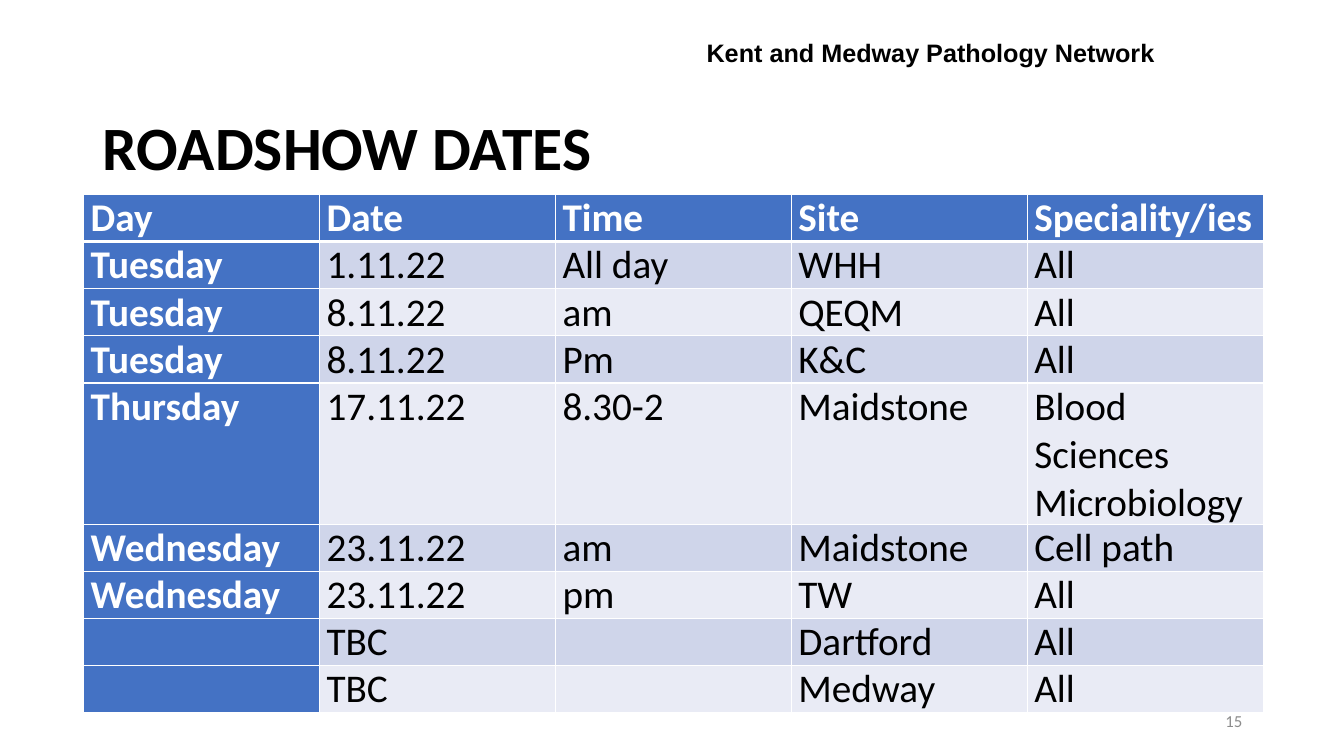
from dataclasses import dataclass

from lxml import etree
from pptx import Presentation
from pptx.dml.color import RGBColor
from pptx.enum.text import MSO_ANCHOR, MSO_AUTO_SIZE, PP_ALIGN
from pptx.oxml.ns import qn
from pptx.slide import Slide
from pptx.table import _Cell
from pptx.text.text import TextFrame
from pptx.util import Inches, Pt

LEFT, RIGHT = PP_ALIGN.LEFT, PP_ALIGN.RIGHT
TOP, MIDDLE = MSO_ANCHOR.TOP, MSO_ANCHOR.MIDDLE
FIXED = MSO_AUTO_SIZE.NONE

BLACK = RGBColor(0x00, 0x00, 0x00)
WHITE = RGBColor(0xFF, 0xFF, 0xFF)
GREY = RGBColor(0x8C, 0x8C, 0x8C)
BLUE = RGBColor(0x44, 0x72, 0xC4)
BANDS = (RGBColor(0xCF, 0xD5, 0xEA), RGBColor(0xE9, 0xEB, 0xF5))

HEADS = ("Day", "Date", "Time", "Site", "Speciality/ies")
ROW = 0.44
COL = 2.34


@dataclass
class Visit:
    day: str
    date: str
    time: str
    site: str
    field: str = "All"
    lines: int = 1

    def cells(self) -> tuple[str, ...]:
        return self.day, self.date, self.time, self.site, self.field


VISITS = [
    Visit("Tuesday", "1.11.22", "All day", "WHH"),
    Visit("Tuesday", "8.11.22", "am", "QEQM"),
    Visit("Tuesday", "8.11.22", "Pm", "K&C"),
    Visit("Thursday", "17.11.22", "8.30-2", "Maidstone",
          "Blood Sciences\nMicrobiology", 2),
    Visit("Wednesday", "23.11.22", "am", "Maidstone", "Cell path"),
    Visit("Wednesday", "23.11.22", "pm", "TW"),
    Visit("", "TBC", "", "Dartford"),
    Visit("", "TBC", "", "Medway"),
]


@dataclass
class Style:
    size: int
    color: RGBColor
    bold: bool = False
    font: str = "Calibri"
    align: PP_ALIGN = LEFT


@dataclass
class Label:
    text: str
    box: tuple[float, float, float, float]
    style: Style
    anchor: MSO_ANCHOR = TOP


LABELS = [
    Label("15", (9.42, 6.95, 3, 0.4), Style(12, GREY, align=RIGHT), MIDDLE),
    Label("Kent and Medway Pathology Network", (6.91, 0.32, 4.76, 0.4),
          Style(18, BLACK, True, "Arial")),
]


def write(frame: TextFrame, text: str, style: Style) -> None:
    frame.text = text
    for para in frame.paragraphs:
        para.alignment = style.align
        para.font.size = Pt(style.size)
        for run in para.runs:
            run.font.name = style.font
            run.font.size = Pt(style.size)
            run.font.bold = style.bold
            run.font.color.rgb = style.color


def edge(cell: _Cell, base: int) -> None:
    """Draw white borders; base is the bottom width in points."""
    props = cell._tc.get_or_add_tcPr()
    sides = {"a:lnL": 1, "a:lnR": 1, "a:lnT": 1, "a:lnB": base}
    for spot, (tag, width) in enumerate(sides.items()):
        line = etree.Element(qn(tag), w=str(Pt(width)))
        fill = etree.SubElement(line, qn("a:solidFill"))
        etree.SubElement(fill, qn("a:srgbClr"), val=str(WHITE))
        props.insert(spot, line)


def add_title(slide: Slide) -> None:
    title = slide.shapes.title
    title.left, title.top = Inches(0.92), Inches(0.77)
    title.width, title.height = Inches(11.5), Inches(1.45)
    frame = title.text_frame
    frame.auto_size = FIXED
    frame.vertical_anchor = MIDDLE
    write(frame, "ROADSHOW DATES", Style(44, BLACK, True))
    frame.paragraphs[0].line_spacing = 0.9


def add_label(slide: Slide, label: Label) -> None:
    box = slide.shapes.add_textbox(*map(Inches, label.box))
    frame = box.text_frame
    frame.word_wrap = True
    frame.vertical_anchor = label.anchor
    write(frame, label.text, label.style)


def add_dates(slide: Slide) -> None:
    rows = [HEADS] + [visit.cells() for visit in VISITS]
    lines = [1] + [visit.lines for visit in VISITS]
    table = slide.shapes.add_table(
        len(rows), len(HEADS), Inches(0.83), Inches(1.93),
        Inches(COL * len(HEADS)), Inches(ROW * sum(lines))).table
    table.first_col = True
    for col in table.columns:
        col.width = Inches(COL)
    for r, texts in enumerate(rows):
        table.rows[r].height = Inches(ROW * lines[r])
        for c, text in enumerate(texts):
            cell = table.cell(r, c)
            head = r == 0 or c == 0
            cell.margin_left = cell.margin_right = Inches(0.07)
            cell.margin_top = cell.margin_bottom = 0
            cell.fill.solid()
            cell.fill.fore_color.rgb = BLUE if head else BANDS[(r - 1) % 2]
            edge(cell, 3 if r == 0 else 1)
            write(cell.text_frame, text,
                  Style(28, WHITE if head else BLACK, head))


def main() -> None:
    deck = Presentation()
    deck.slide_width, deck.slide_height = Inches(13.33), Inches(7.5)
    slide = deck.slides.add_slide(deck.slide_layouts[5])
    add_title(slide)
    for label in LABELS:
        add_label(slide, label)
    add_dates(slide)
    deck.save("out.pptx")


if __name__ == "__main__":
    main()
